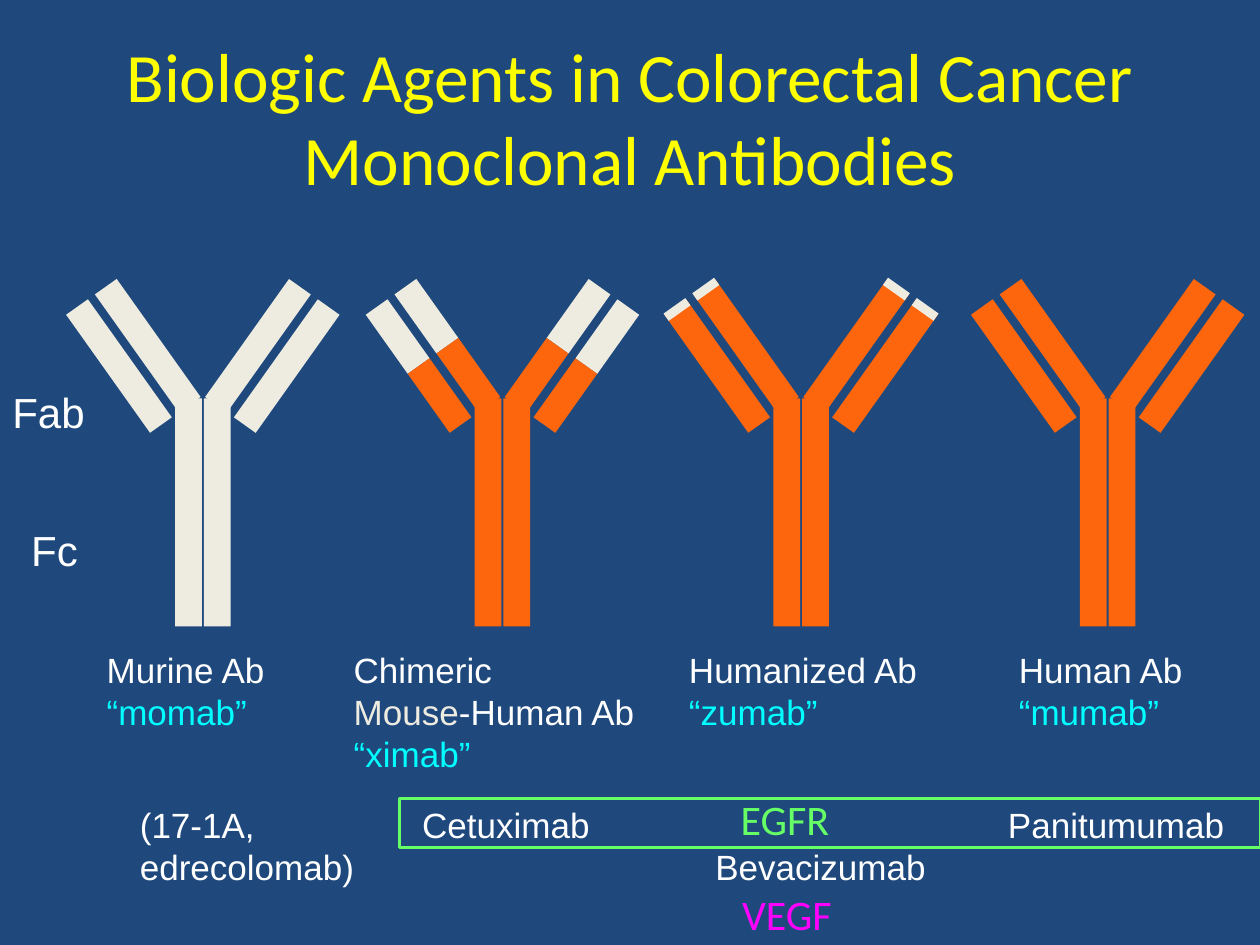
"""Build a slide comparing four types of monoclonal antibody in colorectal cancer."""
from dataclasses import dataclass
from math import cos, radians, sin

from pptx import Presentation
from pptx import util as u
from pptx.dml.color import RGBColor
from pptx.enum import shapes, text


@dataclass(frozen=True)
class Theme:
    background: str = "1F497D"
    title: str = "FFFF00"
    white: str = "FFFFFF"
    mouse: str = "EEECE1"
    human: str = "FE660D"
    suffix: str = "00FFFF"
    egfr: str = "66FF66"
    vegf: str = "FF00FF"
    body_font: str = "Arial"
    title_font: str = "Calibri"
    title_size: float = 39.6
    region_size: float = 24
    body_size: float = 20


THEME = Theme()
TITLE = "Biologic Agents in Colorectal Cancer Monoclonal Antibodies"

BAR, ARM, STEM, TIP = 0.54, 2.92, 4.6, 0.18
STEM_TOP, STEM_OFFSET, TILT = 8.03, 0.29, 35.4
ARM_CENTRES = [(1.11, 6.97), (1.69, 7.38)]

WHOLE_MOUSE = [(0, ARM, THEME.mouse)]
WHOLE_HUMAN = [(0, ARM, THEME.human)]
HALVES = [(ARM / 4, ARM / 2, THEME.mouse), (-ARM / 4, ARM / 2, THEME.human)]
TIPPED = WHOLE_HUMAN + [(1.4, TIP, THEME.mouse)]

ANTIBODIES = [
    (4.09, THEME.mouse, WHOLE_MOUSE),
    (10.13, THEME.human, HALVES),
    (16.15, THEME.human, TIPPED),
    (22.33, THEME.human, WHOLE_HUMAN),
]

CAPTION_TOP, DRUG_TOP = 12.95, 16.08
CAPTIONS = [
    (1.9, CAPTION_TOP, 3.71, [[("Murine Ab", THEME.white)], [("“momab”", THEME.suffix)]]),
    (6.88, CAPTION_TOP, 6.22, [
        [("Chimeric", THEME.white)],
        [("Mouse", THEME.mouse), ("-Human Ab", THEME.white)],
        [("“ximab”", THEME.suffix)],
    ]),
    (13.64, CAPTION_TOP, 5.16, [[("Humanized Ab", THEME.white)], [("“zumab”", THEME.suffix)]]),
    (20.29, CAPTION_TOP, 3.84, [[("Human Ab", THEME.white)], [("“mumab”", THEME.suffix)]]),
    (2.57, DRUG_TOP, 4.88, [[("(17-1A,", THEME.white)], [("edrecolomab)", THEME.white)]]),
    (8.26, DRUG_TOP, 3.91, [[("Cetuximab", THEME.white)]]),
    (14.17, 16.92, 4.8, [[("Bevacizumab", THEME.white)]]),
    (20.07, DRUG_TOP, 4.9, [[("Panitumumab", THEME.white)]]),
]
REGIONS = [
    (0, 7.67, 1.98, "Fab"),
    (0.38, 10.44, 1.45, "Fc"),
]
TARGETS = [
    (14.68, 15.88, 2.87, "EGFR", THEME.egfr),
    (14.71, 17.78, 2.82, "VEGF", THEME.vegf),
]
EGFR_FRAME = (8.05, 16.1, 17.35, 0.99)


def rgb(code):
    return RGBColor.from_string(code)


def add_bar(slide, centre_x, centre_y, height, colour, tilt=0):
    bar = slide.shapes.add_shape(
        shapes.MSO_SHAPE.RECTANGLE,
        u.Cm(centre_x - BAR / 2), u.Cm(centre_y - height / 2), u.Cm(BAR), u.Cm(height))
    bar.rotation = tilt
    bar.shadow.inherit = False
    bar.fill.solid()
    bar.fill.fore_color.rgb = rgb(colour)
    bar.line.fill.background()


def add_antibody(slide, axis, stem_colour, segments):
    for side in (-1, 1):
        for offset, centre_y in ARM_CENTRES:
            for along, length, colour in segments:
                x = axis + side * (offset + along * sin(radians(TILT)))
                y = centre_y - along * cos(radians(TILT))
                add_bar(slide, x, y, length, colour, side * TILT)
        add_bar(slide, axis + side * STEM_OFFSET, STEM_TOP + STEM / 2, STEM, stem_colour)


def add_text(slide, left, top, width, lines, size, font):
    height = 0.25 + len(lines) * size * 0.0425
    box = slide.shapes.add_textbox(u.Cm(left), u.Cm(top), u.Cm(width), u.Cm(height))
    frame = box.text_frame
    frame.word_wrap = False
    frame.auto_size = text.MSO_AUTO_SIZE.SHAPE_TO_FIT_TEXT
    for index, line in enumerate(lines):
        para = frame.add_paragraph() if index else frame.paragraphs[0]
        para.font.size, para.font.name = u.Pt(size), font
        para.font.color.rgb = rgb(line[0][1])
        for words, colour in line:
            span = para.add_run()
            span.text = words
            if len(line) > 1:
                span.font.color.rgb = rgb(colour)


def add_title(slide):
    title = slide.shapes.title
    title.left, title.top, title.width, title.height = map(u.Cm, (1.27, 0.76, 22.86, 3.18))
    frame = title.text_frame
    frame.text = TITLE
    frame.word_wrap = True
    frame.auto_size = text.MSO_AUTO_SIZE.NONE
    frame.vertical_anchor = text.MSO_ANCHOR.MIDDLE
    para = frame.paragraphs[0]
    para.alignment = text.PP_ALIGN.CENTER
    para.font.size, para.font.name = u.Pt(THEME.title_size), THEME.title_font
    para.font.color.rgb = rgb(THEME.title)


def add_frame(slide):
    frame = slide.shapes.add_shape(shapes.MSO_SHAPE.RECTANGLE, *map(u.Cm, EGFR_FRAME))
    frame.shadow.inherit = False
    frame.fill.background()
    frame.line.color.rgb = rgb(THEME.egfr)
    frame.line.width = u.Pt(1.5)


def main():
    deck = Presentation()
    deck.slide_width, deck.slide_height = u.Cm(25.4), u.Cm(19.05)
    page = deck.slides.add_slide(deck.slide_layouts[5])
    page.background.fill.solid()
    page.background.fill.fore_color.rgb = rgb(THEME.background)
    add_title(page)
    for antibody in ANTIBODIES:
        add_antibody(page, *antibody)
    for left, top, width, lines in CAPTIONS:
        add_text(page, left, top, width, lines, THEME.body_size, THEME.body_font)
    for left, top, width, name in REGIONS:
        add_text(page, left, top, width, [[(name, THEME.white)]],
                 THEME.region_size, THEME.body_font)
    add_frame(page)
    for left, top, width, name, colour in TARGETS:
        add_text(page, left, top, width, [[(name, colour)]],
                 THEME.region_size, THEME.title_font)
    deck.save("out.pptx")


if __name__ == "__main__":
    main()
